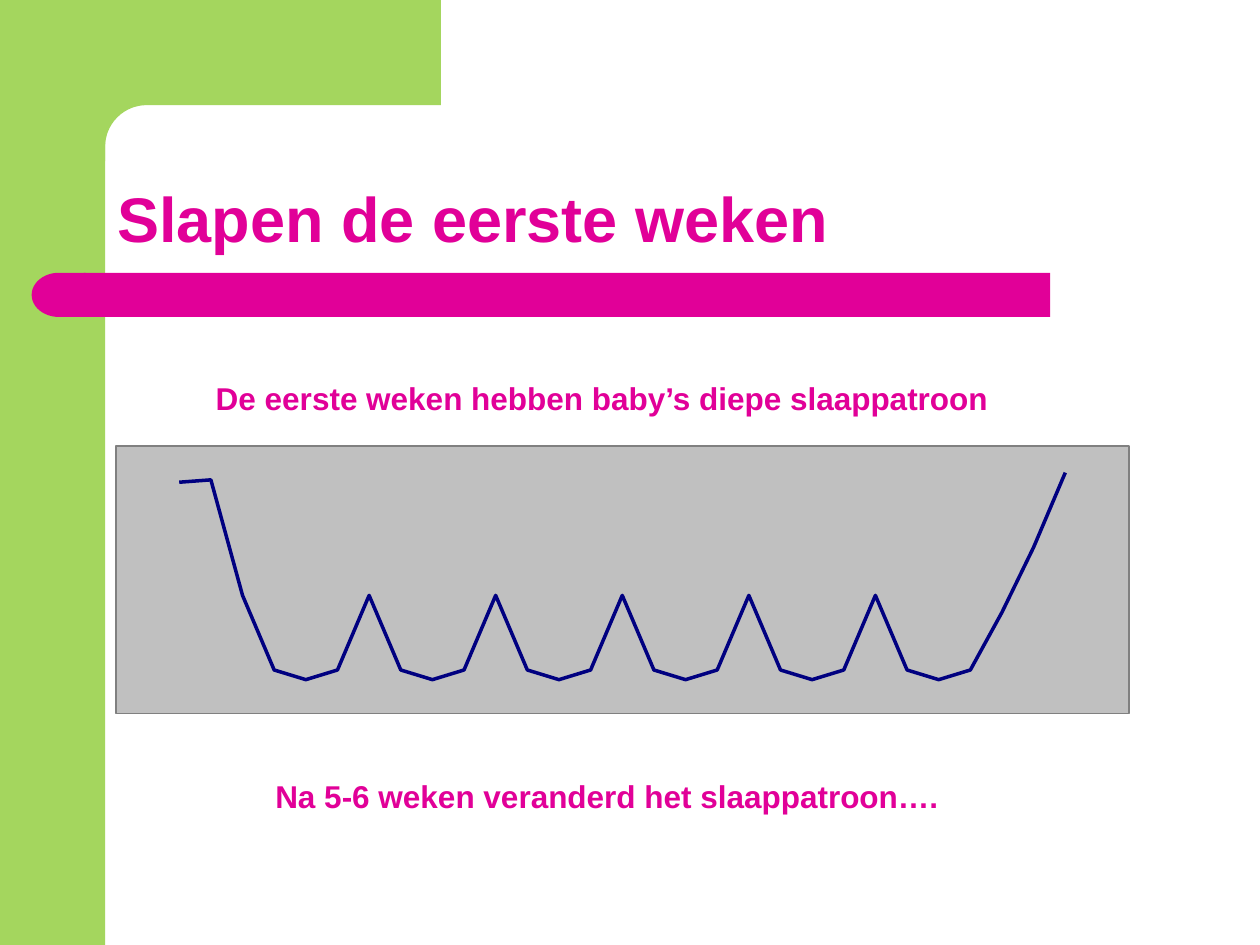
from math import cos, pi, sin

from lxml.etree import SubElement
from pptx import Presentation
from pptx.chart.data import XyChartData
from pptx.dml.color import RGBColor
from pptx.enum.chart import XL_CHART_TYPE
from pptx.enum.shapes import MSO_SHAPE
from pptx.enum.text import MSO_ANCHOR
from pptx.oxml import parse_xml
from pptx.oxml.ns import nsdecls, qn
from pptx.util import Cm, Pt

COLORS = {"green": "A4D65E", "pink": "E10098", "white": "FFFFFF", "black": "000000",
          "plot": "C0C0C0", "frame": "808080", "curve": "000080"}
FONT = "Arial"


class SlideBuilder:
    """Holds the style and the current slide, and adds each kind of element."""

    def __init__(self, slide):
        self.slide = slide

    def color(self, name):
        return RGBColor.from_string(COLORS[name])

    def paint(self, shape, color):
        shape.shadow.inherit = False
        shape.fill.solid()
        shape.fill.fore_color.rgb = self.color(color)
        shape.line.fill.background()

    def block(self, kind, left, top, width, height, color, flipped=False):
        shape = self.slide.shapes.add_shape(kind, Cm(left), Cm(top), Cm(width), Cm(height))
        self.paint(shape, color)
        if flipped:
            shape.element.spPr.xfrm.set("flipH", "1")

    def outline(self, points, color):
        start, *others = [(Cm(x), Cm(y)) for x, y in points]
        builder = self.slide.shapes.build_freeform(*start)
        builder.add_line_segments(others, close=True)
        self.paint(builder.convert_to_shape(), color)

    def text(self, wording, left, top, width, height, size, anchor=MSO_ANCHOR.TOP,
             line_spacing=None, space_before=0, hanging=0):
        frame = self.slide.shapes.add_textbox(Cm(left), Cm(top), Cm(width), Cm(height)).text_frame
        frame.word_wrap = True
        frame.vertical_anchor = anchor
        paragraph = frame.paragraphs[0]
        paragraph.text = wording
        paragraph.line_spacing = line_spacing
        paragraph.space_before = Pt(space_before)
        if hanging:
            properties = paragraph._p.get_or_add_pPr()
            properties.set("marL", str(Cm(hanging)))
            properties.set("indent", str(-Cm(hanging)))
        font = paragraph.runs[0].font
        font.name, font.size, font.bold = FONT, Pt(size), True
        font.color.rgb = self.color("pink")

    def area_style(self, fill, line=None):
        stroke = (f'<a:solidFill><a:srgbClr val="{COLORS[line]}"/></a:solidFill>'
                  if line else "<a:noFill/>")
        return parse_xml(f'<c:spPr {nsdecls("c", "a")}><a:solidFill><a:srgbClr val="{COLORS[fill]}"/>'
                         f'</a:solidFill><a:ln w="{Pt(1)}">{stroke}</a:ln></c:spPr>')

    def curve(self, points, left, top, width, height, x_max, y_max):
        data = XyChartData()
        series_data = data.add_series("Series 1")
        for x, y in points:
            series_data.add_data_point(x, y)
        chart = self.slide.shapes.add_chart(
            XL_CHART_TYPE.XY_SCATTER_SMOOTH_NO_MARKERS,
            Cm(left), Cm(top), Cm(width), Cm(height), data).chart
        chart.has_legend = chart.has_title = False
        chart.font.name, chart.font.size = FONT, Pt(11)
        chart.font.color.rgb = self.color("black")
        for axis, maximum in ((chart.category_axis, x_max), (chart.value_axis, y_max)):
            axis.minimum_scale, axis.maximum_scale = 0, maximum
            axis.has_major_gridlines = False
            axis.visible = False
        plot = chart.plots[0]
        plot.vary_by_categories = False
        series = plot.series[0]
        series.smooth = True
        series.format.line.color.rgb = self.color("curve")
        series.format.line.width = Pt(2)
        self.fill_chart(chart.element.chart)

    def fill_chart(self, chart_xml):
        area = chart_xml.plotArea
        layout = area.find(qn("c:layout"))
        if layout is None:
            layout = parse_xml(f'<c:layout {nsdecls("c")}/>')
            area.insert(0, layout)
        manual = SubElement(layout, qn("c:manualLayout"))
        for tag, value in (("layoutTarget", "inner"), ("xMode", "edge"), ("yMode", "edge"),
                           ("x", "0"), ("y", "0.01"), ("w", "1"), ("h", "0.99")):
            SubElement(manual, qn(f"c:{tag}")).set("val", value)
        area.append(self.area_style("plot", "frame"))
        chart_xml.addnext(self.area_style("white"))


def main():
    presentation = Presentation()
    presentation.slide_width, presentation.slide_height = Cm(25.4), Cm(19.05)
    builder = SlideBuilder(presentation.slides.add_slide(presentation.slide_layouts[6]))

    band, radius, steps = 2.12, 0.84, 16
    center = band + radius
    corner = [(center - radius * sin(angle), center - radius * cos(angle))
              for angle in (pi / 2 * step / steps for step in range(steps + 1))]
    builder.block(MSO_SHAPE.RECTANGLE, 0, 0, band, 19.05, "green")
    builder.outline([(1.27, 0), (8.89, 0), (8.89, band), *corner,
                     (band, 3.25), (1.27, 3.25)], "green")
    builder.block(MSO_SHAPE.RECTANGLE, 1.69, 5.5, 19.48, 0.89, "pink")
    builder.block(MSO_SHAPE.FLOWCHART_DELAY, 0.64, 5.5, 1.09, 0.89, "pink", flipped=True)

    sleep_depth = [96, 97, 49] + [18, 14, 18, 49] * 5 + [18, 14, 18, 42, 69, 100]
    sleep_curve = [(1 + index / 2, depth) for index, depth in enumerate(sleep_depth)]
    builder.curve(sleep_curve, 2.32, 8.94, 20.45, 5.46, x_max=16, y_max=111)

    caption = {"size": 18, "space_before": 3.6, "hanging": 0.95}
    builder.text("De eerste weken hebben baby’s diepe slaappatroon", 4.1, 7.52, 16.35, 1.02, **caption)
    builder.text("Na 5-6 weken veranderd het slaappatroon….", 5.3, 15.53, 15.7, 1.02, **caption)
    builder.text("Slapen de eerste weken", 2.12, 2.12, 22.01, 3.17, 36,
                 anchor=MSO_ANCHOR.BOTTOM, line_spacing=0.9)
    presentation.save("out.pptx")


if __name__ == "__main__":
    main()
